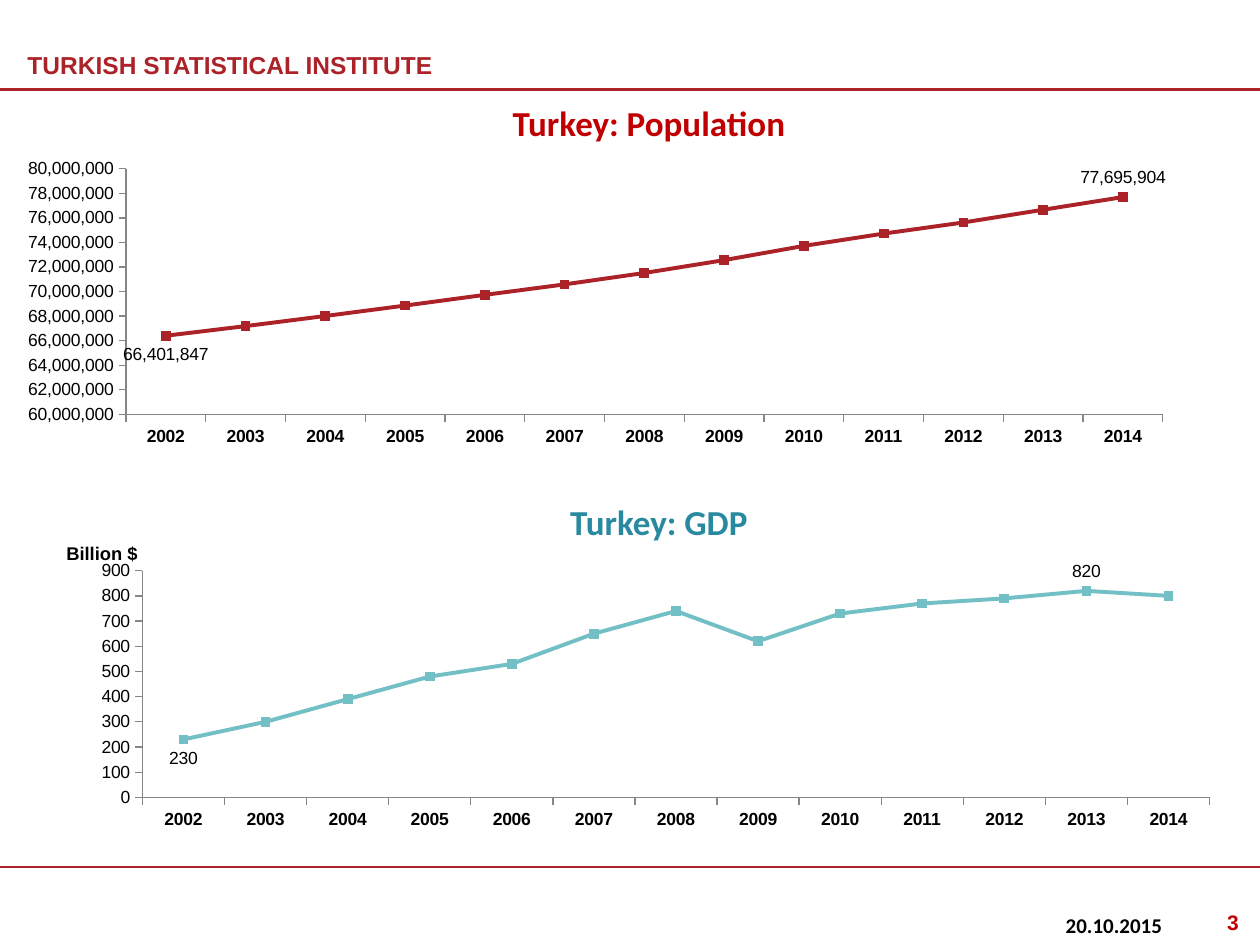
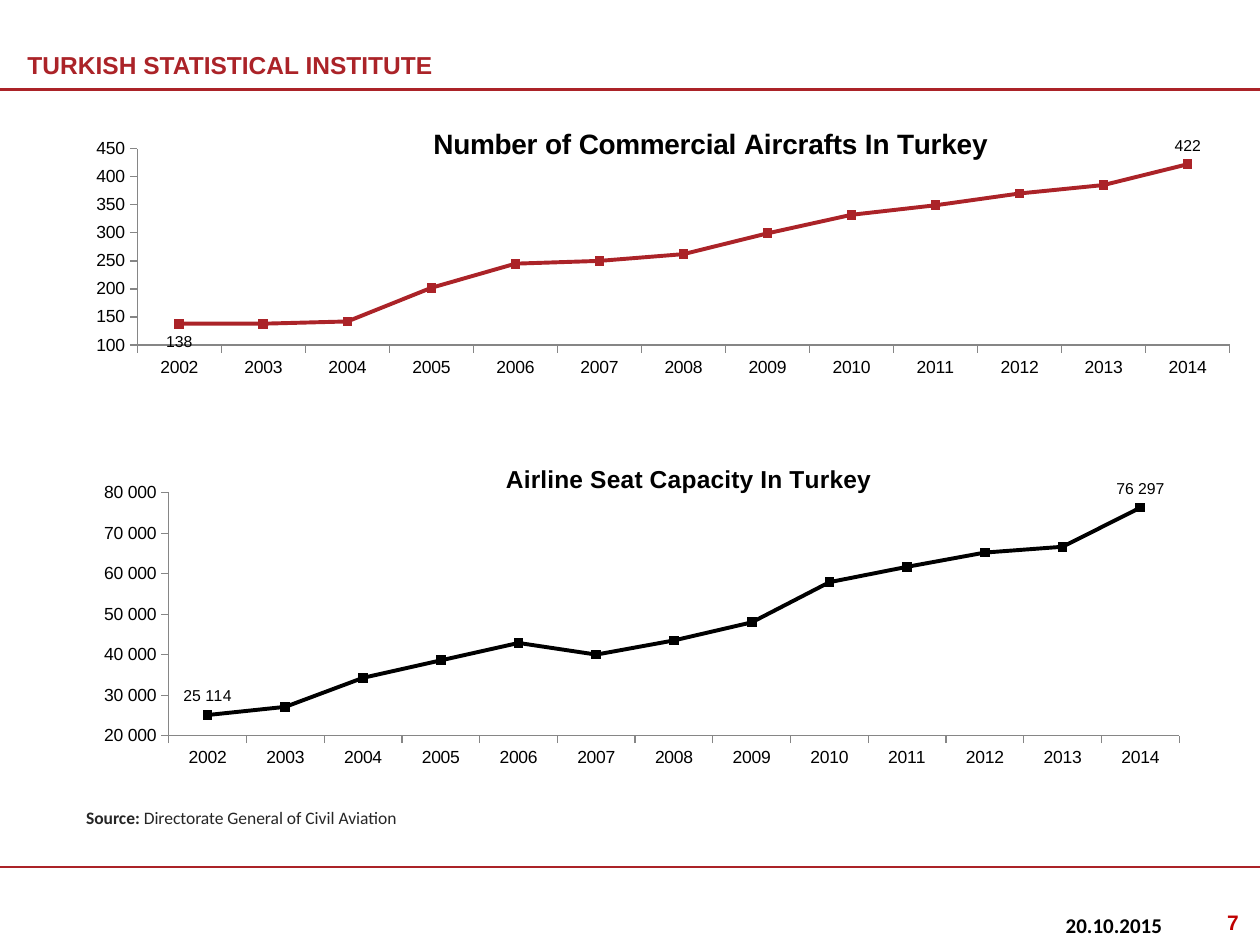
from lxml.etree import SubElement
from pptx import Presentation
from pptx.chart.data import CategoryChartData
from pptx.dml.color import RGBColor
from pptx.enum.chart import XL_CHART_TYPE, XL_LABEL_POSITION, XL_TICK_MARK
from pptx.enum.shapes import MSO_CONNECTOR
from pptx.enum.text import MSO_ANCHOR, PP_ALIGN
from pptx.oxml import parse_xml
from pptx.oxml.ns import nsdecls, qn
from pptx.util import Inches, Pt

RED, DARK_RED, TEAL, LIGHT_TEAL = "AB2328", "C00000", "2889A0", "72BFC5"
BLACK, CHARCOAL, GREY = "000000", "262626", "868686"
YEARS = [str(year) for year in range(2002, 2015)]
ABOVE, BELOW = XL_LABEL_POSITION.ABOVE, XL_LABEL_POSITION.BELOW
SPACED = r"#\ ##0"

POPULATION = [66401847, 67187251, 68010215, 68860530, 69729970, 70586256, 71517100,
              72561312, 73722988, 74724269, 75627384, 76667864, 77695904]
GDP = [230, 300, 390, 480, 530, 650, 740, 620, 730, 770, 790, 820, 800]
AIRCRAFT = [138, 138, 142, 202, 245, 250, 262, 299, 332, 349, 370, 385, 422]
SEATS = [25114, 27124, 34287, 38600, 42894, 40017, 43524,
         47972, 57899, 61695, 65208, 66639, 76297]


def rgb(value):
    return RGBColor.from_string(value)


def style_font(font, size, color=BLACK, bold=False, name="Arial"):
    font.size, font.bold, font.name = Pt(size), bold, name
    font.color.rgb = rgb(color)


def add_text(slide, box, runs, size, color, name="Calibri",
             align=PP_ALIGN.LEFT, anchor=MSO_ANCHOR.MIDDLE):
    """Add one line of text; runs is a list of (text, bold) pairs."""
    tf = slide.shapes.add_textbox(*map(Inches, box)).text_frame
    tf.word_wrap = True
    tf.vertical_anchor = anchor
    p = tf.paragraphs[0]
    p.alignment = align
    for text, bold in runs:
        r = p.add_run()
        r.text = text
        style_font(r.font, size, color, bold, name)


def add_rule(slide, y):
    line = slide.shapes.add_connector(
        MSO_CONNECTOR.STRAIGHT, 0, Inches(y), Inches(10), Inches(y))
    line.line.color.rgb = rgb(RED)
    line.line.width = Pt(1.5)
    SubElement(line._element.spPr, qn("a:effectLst"))


def add_framed_slide(prs, number):
    """Add a blank slide with the header, rules, date and page number."""
    slide = prs.slides.add_slide(prs.slide_layouts[6])
    add_text(slide, (0.12, 0.33, 3.54, 0.36),
             [("TURKISH STATISTICAL INSTITUTE", True)], 14, RED, "Arial")
    for y in (0.71, 6.88):
        add_rule(slide, y)
    add_text(slide, (8.36, 7.19, 1.2, 0.31), [("20.10.2015", True)], 12, BLACK,
             anchor=MSO_ANCHOR.TOP)
    add_text(slide, (9.13, 7.17, 0.8, 0.31), [(number, True)], 12, DARK_RED, "Arial",
             PP_ALIGN.RIGHT, MSO_ANCHOR.TOP)
    return slide


def add_heading(slide, box, text, color):
    add_text(slide, box, [(text, True)], 20, color, align=PP_ALIGN.CENTER)


def place_in_chart(element, index, chart_box, box):
    """Fix a chart part at a slide position (left, top[, width, height])."""
    left, top, width, height = chart_box
    fractions = [(box[0] - left) / width, (box[1] - top) / height]
    tags = ["x", "y"]
    target = ""
    if len(box) == 4:
        fractions += [box[2] / width, box[3] / height]
        tags += ["w", "h"]
        target = '<c:layoutTarget val="inner"/>'
    modes = "".join(f'<c:{tag}Mode val="edge"/>' for tag in tags[:2])
    values = "".join(f'<c:{tag} val="{v:.4f}"/>' for tag, v in zip(tags, fractions))
    for old in element.findall(qn("c:layout")):
        element.remove(old)
    element.insert(index, parse_xml(
        f'<c:layout {nsdecls("c")}><c:manualLayout>{target}{modes}{values}'
        "</c:manualLayout></c:layout>"))


def style_axis(axis, bold=False):
    axis.has_major_gridlines = False
    axis.major_tick_mark = XL_TICK_MARK.OUTSIDE
    axis.minor_tick_mark = XL_TICK_MARK.NONE
    axis.format.line.color.rgb = rgb(GREY)
    axis.format.line.width = Pt(0.75)
    style_font(axis.tick_labels.font, 10, bold=bold)


def add_chart_title(chart, chart_box, text, size, position):
    tf = chart.chart_title.text_frame
    tf.text = text
    style_font(tf.paragraphs[0].runs[0].font, size, bold=True)
    chart.chart_title.include_in_layout = False
    place_in_chart(chart.chart_title._element, 1, chart_box, position)


def add_line_chart(slide, box, plot_box, values, color, scale, labels,
                   number_format="0", title=None, bold_years=False,
                   label_size=10, kind=XL_CHART_TYPE.LINE):
    """scale is (min, max, step); labels maps a point index to its label position."""
    data = CategoryChartData(number_format=number_format)
    data.categories = YEARS
    data.add_series("Series 1", values)
    chart = slide.shapes.add_chart(kind, *map(Inches, box), data).chart
    style_font(chart.font, 10)
    chart.has_legend = False
    chart.has_title = title is not None
    if title:
        add_chart_title(chart, box, *title)
    place_in_chart(chart._chartSpace.chart.plotArea, 0, box, plot_box)

    style_axis(chart.category_axis, bold_years)
    value_axis = chart.value_axis
    style_axis(value_axis)
    value_axis.minimum_scale, value_axis.maximum_scale, value_axis.major_unit = scale
    value_axis.tick_labels.number_format = number_format
    value_axis.tick_labels.number_format_is_linked = False

    chart.plots[0].vary_by_categories = False
    series = chart.plots[0].series[0]
    series.smooth = False
    series.format.line.color.rgb = rgb(color)
    series.format.line.width = Pt(2.25)
    series.marker.style = None
    series.data_labels.show_value = False
    for index, position in labels.items():
        label = series.points[index].data_label
        style_font(label.font, label_size)
        label.position = position


def build_economy_slide(prs):
    slide = add_framed_slide(prs, "3")
    add_heading(slide, (0.62, 0.78, 9.06, 0.39), "Turkey: Population", DARK_RED)
    add_heading(slide, (0.7, 3.98, 9.06, 0.31), "Turkey: GDP", TEAL)
    add_line_chart(slide, (0.39, 4.22, 9.38, 2.5), (1.13, 4.53, 8.47, 1.8),
                   GDP, LIGHT_TEAL, (0, 900, 100), {0: BELOW, 11: ABOVE},
                   title=("Billion $", 10.5, (0.5, 4.27)), bold_years=True)
    add_line_chart(slide, (0, 1.09, 9.45, 2.5), (1, 1.34, 8.23, 1.95),
                   POPULATION, RED, (60000000, 80000000, 2000000),
                   {0: BELOW, 12: ABOVE}, "#,##0", bold_years=True,
                   kind=XL_CHART_TYPE.LINE_STACKED)


def build_aviation_slide(prs):
    slide = add_framed_slide(prs, "7")
    add_line_chart(slide, (0.23, 3.44, 9.34, 2.79), (1.34, 3.91, 8.02, 1.93),
                   SEATS, BLACK, (20000, 80000, 10000), {0: ABOVE, 12: ABOVE}, SPACED,
                   ("Airline Seat Capacity In Turkey", 14, (3.98, 3.64)), label_size=9)
    add_line_chart(slide, (0.23, 0.86, 9.58, 2.58), (1.09, 1.18, 8.67, 1.56),
                   AIRCRAFT, RED, (100, 450, 50), {0: BELOW, 12: ABOVE},
                   title=("Number of Commercial Aircrafts In Turkey", 16, (3.4, 0.96)),
                   label_size=9)
    add_text(slide, (0.55, 6.25, 2.73, 0.47),
             [("Source: ", True), ("Directorate General of Civil Aviation", False)],
             10, CHARCOAL, align=PP_ALIGN.CENTER)


def main():
    prs = Presentation()
    prs.slide_width, prs.slide_height = Inches(10), Inches(7.5)
    build_economy_slide(prs)
    build_aviation_slide(prs)
    prs.save("out.pptx")


if __name__ == "__main__":
    main()
